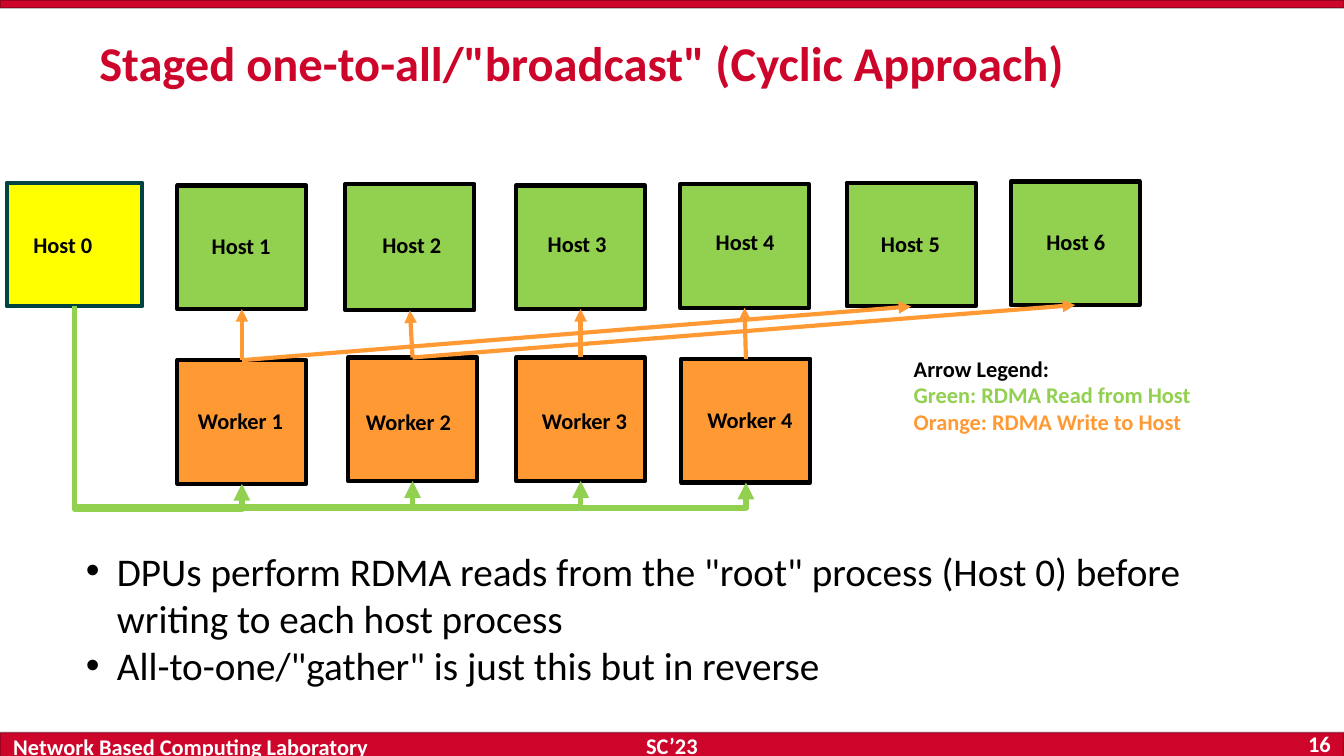
from dataclasses import dataclass

from lxml.etree import SubElement
from pptx import Presentation
from pptx.dml.color import RGBColor
from pptx.enum.shapes import MSO_CONNECTOR, MSO_SHAPE
from pptx.enum.text import MSO_ANCHOR, MSO_AUTO_SIZE, PP_ALIGN
from pptx.oxml.ns import qn
from pptx.util import Inches, Pt

COLS, ROWS = 100, 56.25  # grid of 0.1 inch cells
TOP, BOTTOM = 0, 2       # connection sites


@dataclass(frozen=True)
class Theme:
    font: str = "Calibri"
    red: str = "CD052B"
    green: str = "92D050"
    orange: str = "FF9933"
    yellow: str = "FFFF00"
    teal: str = "004343"
    black: str = "000000"
    white: str = "FFFFFF"
    title: int = 26
    body: int = 21
    label: int = 12


def grid(n):
    return Inches(n / 10)


def rgb(color):
    return RGBColor.from_string(color)


class Deck:
    def __init__(self, theme):
        self.theme = theme
        self.prs = Presentation()
        self.prs.slide_width, self.prs.slide_height = grid(COLS), grid(ROWS)
        self.s = self.prs.slides.add_slide(self.prs.slide_layouts[6])

    def rect(self, x, y, w, h, fill, line, width=2.25, alpha=None):
        sp = self.s.shapes.add_shape(MSO_SHAPE.RECTANGLE, *map(grid, (x, y, w, h)))
        sp.shadow.inherit = False
        sp.fill.solid()
        sp.fill.fore_color.rgb = rgb(fill)
        sp.line.color.rgb = rgb(line)
        sp.line.width = Pt(width)
        if alpha:
            clr = sp.line._get_or_add_ln().find(".//" + qn("a:srgbClr"))
            SubElement(clr, qn("a:alpha"), val=str(alpha * 1000))
        return sp

    def text(self, x, y, w, h, lines, size, bold=True, align=PP_ALIGN.LEFT,
             anchor=MSO_ANCHOR.TOP, grow=False, bullet=False):
        """Each line is a (text, colour) pair."""
        tf = self.s.shapes.add_textbox(*map(grid, (x, y, w, h))).text_frame
        tf.word_wrap = True
        tf.vertical_anchor = anchor
        tf.auto_size = MSO_AUTO_SIZE.SHAPE_TO_FIT_TEXT if grow else MSO_AUTO_SIZE.NONE
        if bullet:
            tf.margin_left = tf.margin_right = Inches(0.07)
            tf.margin_top = tf.margin_bottom = Inches(0.04)
        for i, (words, color) in enumerate(lines):
            p = tf.paragraphs[0] if i == 0 else tf.add_paragraph()
            p.alignment = align
            if bullet:
                pPr = p._p.get_or_add_pPr()
                pPr.set("marL", str(Inches(0.23)))
                pPr.set("indent", str(-Inches(0.23)))
                SubElement(pPr, qn("a:buFont"), typeface="Arial")
                SubElement(pPr, qn("a:buChar"), char="•")
            r = p.add_run()
            r.text = words
            r.font.name, r.font.size, r.font.bold = self.theme.font, Pt(size), bold
            r.font.color.rgb = rgb(color)

    def arrow(self, start, start_site, end, end_site, color, width,
              kind=MSO_CONNECTOR.STRAIGHT):
        c = self.s.shapes.add_connector(kind, 0, 0, 0, 0)
        c.begin_connect(start, start_site)
        c.end_connect(end, end_site)
        c.line.color.rgb = rgb(color)
        c.line.width = Pt(width)
        SubElement(c.line._get_or_add_ln(), qn("a:tailEnd"), type="triangle")
        SubElement(c._element.spPr, qn("a:effectLst"))
        return c

    def under_arrow(self, start, end, drop, color, width):
        """Elbow from bottom to bottom, running `drop` rows below the end."""
        c = self.arrow(start, BOTTOM, end, BOTTOM, color, width, MSO_CONNECTOR.ELBOW)
        x0, y0, x1, y1 = c.begin_x, c.begin_y, c.end_x, c.end_y
        across, down = x1 - x0, y1 - y0
        # A quarter turn swaps width and height about the same centre
        c.left, c.top = (x0 + x1 - down) // 2, (y0 + y1 - across) // 2
        c.width, c.height = down, across
        xfrm = c._element.spPr.find(qn("a:xfrm"))
        xfrm.attrib.pop("flipV", None)
        xfrm.set("rot", str(270 * 60000))
        xfrm.set("flipH", "1")
        geom = c._element.spPr.find(qn("a:prstGeom"))
        guides = geom.find(qn("a:avLst"))
        if guides is None:
            guides = SubElement(geom, qn("a:avLst"))
        bend = round(100000 * (down + grid(drop)) / down)
        SubElement(guides, qn("a:gd"), name="adj1", fmla=f"val {bend}")

    def node(self, name, box, label, fill, line, label_width, align=PP_ALIGN.CENTER):
        sp = self.rect(*box, fill, line)
        self.text(*label, label_width, 3, [(name, self.theme.black)],
                  self.theme.label, align=align, grow=True)
        return sp


def main():
    t = Theme()
    deck = Deck(t)

    # Top and bottom bars with footer
    for y, h in ((54.5, 1.9), (0, 0.6)):
        deck.rect(0, y, COLS, h, t.red, t.black, 1, alpha=25)
    for x, y, w, h, words, align in (
            (93.4, 54.4, 6.6, 1.8, "16", PP_ALIGN.RIGHT),
            (0, 54.4, 30.2, 2.3, "Network Based Computing Laboratory", PP_ALIGN.LEFT),
            (37.6, 54.8, 24.8, 1.4, "SC’23", PP_ALIGN.CENTER)):
        deck.text(x, y, w, h, [(words, t.white)], t.label, align=align,
                  anchor=MSO_ANCHOR.MIDDLE)

    # Title and bullets
    deck.text(6.4, 2, 88.5, 6.3,
              [('Staged one-to-all/"broadcast" (Cyclic Approach)', t.red)], t.title)
    deck.text(5.7, 40.3, 90.3, 11.4, [
        ('DPUs perform RDMA reads from the "root" process (Host 0) before '
         'writing to each host process', t.black),
        ('All-to-one/"gather" is just this but in reverse', t.black),
    ], t.body, bold=False, grow=True, bullet=True)

    # Hosts and workers: box left, top, height; label left, top
    root = deck.node("Host 0", (0.5, 13.6, 10.1, 9.2), (1.5, 16.7),
                     t.yellow, t.teal, 8.3, PP_ALIGN.LEFT)
    hosts = [deck.node(f"Host {i}", (x, y, 9.6, h), label, t.green, t.black, 8.3)
             for i, (x, y, h, label) in enumerate((
                 (13.2, 13.8, 9.2, (13.8, 16.8)),
                 (25.7, 13.7, 9.4, (26.5, 16.7)),
                 (38.4, 13.8, 9.2, (38.8, 16.6)),
                 (50.6, 13.7, 9.2, (51.3, 16.5)),
                 (63, 13.6, 9.2, (63.6, 16.6)),
                 (75.2, 13.5, 9.2, (75.9, 16.5))), 1)]
    workers = [deck.node(f"Worker {i}", (x, y, 9.6, 9.2), label, t.orange, t.black, 9.6)
               for i, (x, y, label) in enumerate((
                   (13.2, 26.8, (13.1, 29.8)),
                   (25.9, 26.6, (25.6, 29.9)),
                   (38.4, 26.6, (38.7, 29.8)),
                   (50.7, 26.7, (51, 29.7))), 1)]

    # Reads from the root, then cyclic writes to the hosts
    for worker in workers:
        deck.under_arrow(root, worker, 1.88, t.green, 3)
    for i, host in enumerate(hosts):
        deck.arrow(workers[i % len(workers)], TOP, host, BOTTOM, t.orange, 2.25)

    # Legend
    deck.text(67, 25.9, 26.1, 7.1, [
        ("Arrow Legend:", t.black),
        ("Green: RDMA Read from Host", t.green),
        ("Orange: RDMA Write to Host", t.orange),
    ], t.label, grow=True)

    deck.prs.save("out.pptx")


if __name__ == "__main__":
    main()
